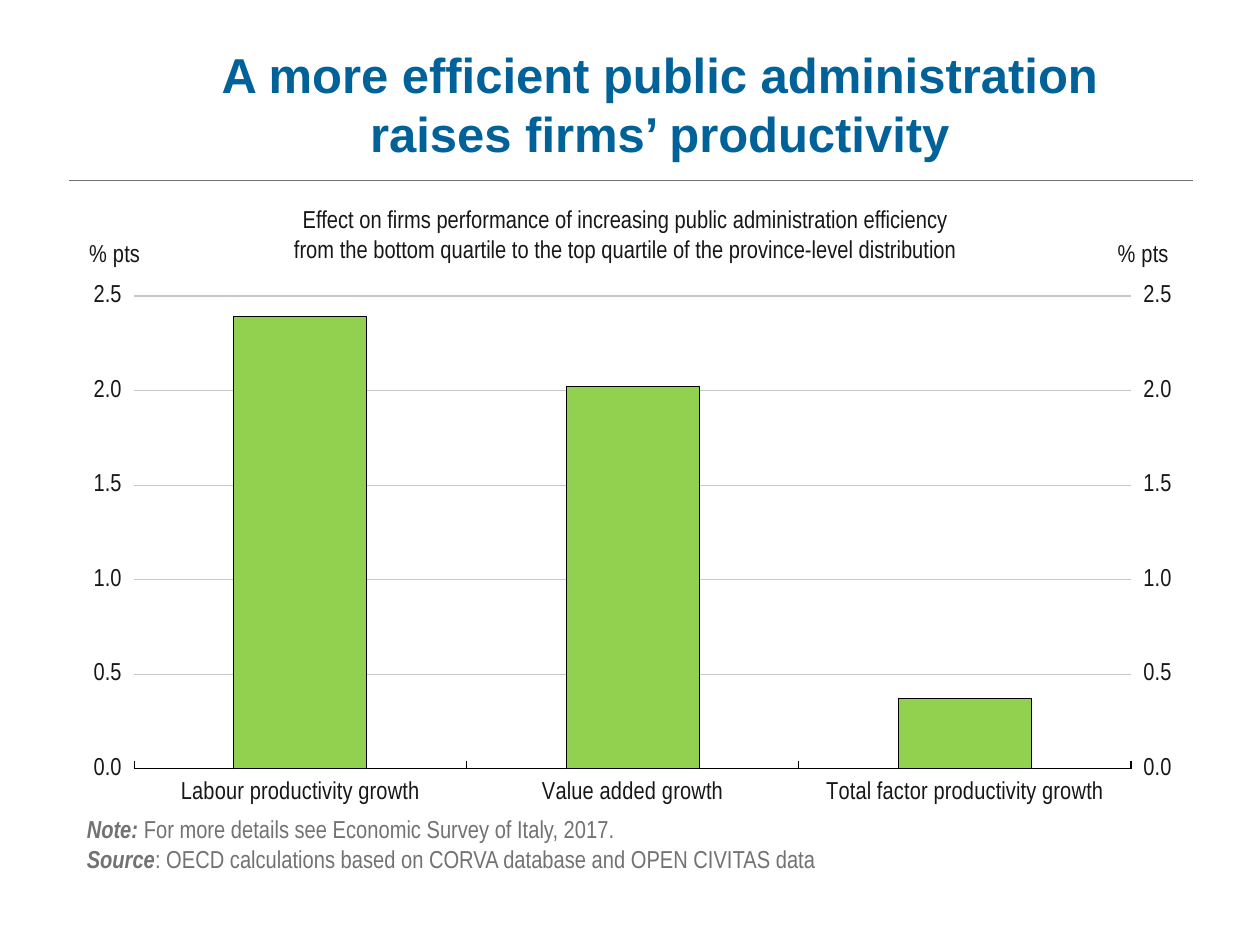
from copy import deepcopy

from lxml.etree import SubElement
from pptx import Presentation
from pptx.chart.data import CategoryChartData
from pptx.dml.color import RGBColor
from pptx.enum.chart import XL_CHART_TYPE, XL_TICK_LABEL_POSITION, XL_TICK_MARK
from pptx.enum.shapes import MSO_CONNECTOR
from pptx.enum.text import MSO_ANCHOR, PP_ALIGN
from pptx.oxml import parse_xml
from pptx.oxml.ns import nsdecls, qn
from pptx.util import Cm, Pt

BLUE = RGBColor(0x00, 0x62, 0x99)
INK = RGBColor(0x17, 0x17, 0x17)
GREY = RGBColor(0x72, 0x72, 0x72)
GRID = RGBColor(0xC8, 0xC8, 0xC8)
GREEN = RGBColor(0x92, 0xD0, 0x50)
RED = RGBColor(0xC0, 0x50, 0x4D)
BLACK = RGBColor(0, 0, 0)
WHITE = RGBColor(0xFF, 0xFF, 0xFF)
NARROW = "Arial Narrow"

TITLE = "A more efficient public administration raises firms’ productivity"
SUBTITLE = (
    "Effect on firms performance of increasing public administration efficiency "
    "from the bottom quartile to the top quartile of the province-level distribution"
)
NOTES = [
    ("Note: ", "For more details see Economic Survey of Italy, 2017."),
    ("Source", ": OECD calculations based on CORVA database and OPEN CIVITAS data"),
]
UNIT = "% pts"
EFFECTS = [
    ("Labour productivity growth", 2.39),
    ("Value added growth", 2.02),
    ("Total factor productivity growth", 0.37),
]
CHART_W, CHART_H = 21.97, 11.71
PLOT = {"x": 1.03, "y": 1.42, "w": 20.16, "h": 9.53}
LEFT_UNIT = {"x": 0.03, "y": 0.23}
RIGHT_UNIT = {"x": 20.83, "y": 0.23}


def set_font(font, name, size, color, bold=False):
    font.name = name
    font.size = Pt(size)
    font.bold = bold
    font.color.rgb = color


def add_text(slide, box, paragraphs, name, size, color, bold=False, align=PP_ALIGN.LEFT):
    tf = slide.shapes.add_textbox(*map(Cm, box)).text_frame
    tf.word_wrap = True
    tf.vertical_anchor = MSO_ANCHOR.MIDDLE
    for i, (lead, body) in enumerate(paragraphs):
        p = tf.paragraphs[0] if i == 0 else tf.add_paragraph()
        p.alignment = align
        set_font(p.font, name, size, color, bold)
        if lead:
            r = p.add_run()
            r.text = lead
            r.font.bold = r.font.italic = True
        p.add_run().text = body


def place(parent, position, after=None, inner=False):
    for old in parent.findall(qn("c:layout")):
        parent.remove(old)
    layout = parse_xml(f"<c:layout {nsdecls('c')}><c:manualLayout/></c:layout>")
    if after is None:
        parent.insert(0, layout)
    else:
        after.addnext(layout)
    manual = layout[0]
    if inner:
        SubElement(manual, qn("c:layoutTarget")).set("val", "inner")
    for key in "xy":
        SubElement(manual, qn(f"c:{key}Mode")).set("val", "edge")
    for key, length in position.items():
        share = length / (CHART_W if key in "xw" else CHART_H)
        SubElement(manual, qn(f"c:{key}")).set("val", str(share))


def place_title(axis, position):
    title = axis.find(qn("c:title"))
    place(title, position, after=title.find(qn("c:tx")))


def add_right_axis(chart):
    area = chart._chartSpace.chart.plotArea
    bars = area.find(qn("c:barChart"))
    cat, val = area.find(qn("c:catAx")), area.find(qn("c:valAx"))
    right_bars, right_cat, right_val = map(deepcopy, (bars, cat, val))
    bars.remove(bars.findall(qn("c:ser"))[1])
    right_bars.remove(right_bars.find(qn("c:ser")))
    bars.addnext(right_bars)
    val.addnext(right_val)
    right_val.addnext(right_cat)

    ids = {cat.find(qn("c:axId")).get("val"): "5001", val.find(qn("c:axId")).get("val"): "5002"}
    for part in (right_bars, right_cat, right_val):
        for tag in ("c:axId", "c:crossAx"):
            for el in part.findall(qn(tag)):
                el.set("val", ids[el.get("val")])
    right_cat.find(qn("c:delete")).set("val", "1")
    right_val.find(qn("c:axPos")).set("val", "r")
    right_val.find(qn("c:crosses")).set("val", "max")
    right_val.remove(right_val.find(qn("c:majorGridlines")))
    place_title(right_val, RIGHT_UNIT)


def add_effects_chart(slide):
    data = CategoryChartData()
    data.categories = [name for name, _ in EFFECTS]
    data.add_series("Series 1", [value for _, value in EFFECTS])
    data.add_series("Series 2", [None] * len(EFFECTS))
    box = map(Cm, (1.68, 4.55, CHART_W, CHART_H))
    chart = slide.shapes.add_chart(XL_CHART_TYPE.COLUMN_CLUSTERED, *box, data).chart
    chart.has_legend = False
    chart.has_title = False
    set_font(chart.font, NARROW, 14, INK)

    plot = chart.plots[0]
    plot.gap_width = 150
    plot.vary_by_categories = False
    for series, color in zip(plot.series, (GREEN, RED)):
        series.format.fill.solid()
        series.format.fill.fore_color.rgb = color
        series.format.line.color.rgb = BLACK
        series.format.line.width = Pt(0.5)

    cat = chart.category_axis
    cat.major_tick_mark = XL_TICK_MARK.INSIDE
    cat.tick_label_position = XL_TICK_LABEL_POSITION.LOW
    cat.format.line.color.rgb = BLACK
    cat.format.line.width = Pt(0.75)

    val = chart.value_axis
    val.minimum_scale, val.maximum_scale, val.major_unit = 0, 2.5, 0.5
    val.major_tick_mark = XL_TICK_MARK.CROSS
    val.tick_labels.number_format = "#,##0.0"
    val.tick_labels.number_format_is_linked = False
    val.format.line.fill.background()
    val.major_gridlines.format.line.color.rgb = GRID
    val.major_gridlines.format.line.width = Pt(0.75)
    tf = val.axis_title.text_frame
    tf.text = UNIT
    set_font(tf.paragraphs[0].font, NARROW, 14, INK)
    body = tf._txBody.find(qn("a:bodyPr"))
    body.set("rot", "0")
    body.set("vert", "horz")

    area = chart._chartSpace.chart.plotArea
    place(area, PLOT, inner=True)
    place_title(area.find(qn("c:valAx")), LEFT_UNIT)
    add_right_axis(chart)
    fill = parse_xml(
        f'<c:spPr {nsdecls("c", "a")}><a:solidFill><a:srgbClr val="{WHITE}"/></a:solidFill></c:spPr>'
    )
    area.append(fill)


def main():
    prs = Presentation()
    prs.slide_width, prs.slide_height = Cm(25.4), Cm(19.05)
    slide = prs.slides.add_slide(prs.slide_layouts[6])

    rule = slide.shapes.add_connector(
        MSO_CONNECTOR.STRAIGHT, Cm(1.4), Cm(3.63), Cm(24.05), Cm(3.63)
    )
    rule.line.color.rgb = GREY
    rule.line.width = Pt(0.5)
    SubElement(rule._element.spPr, qn("a:effectLst"))

    add_effects_chart(slide)
    add_text(slide, (3, 0.66, 20.6, 2.84), [("", TITLE)], "Arial", 28, BLUE, True, PP_ALIGN.CENTER)
    add_text(slide, (5.41, 3.99, 14.4, 1.45), [("", SUBTITLE)], NARROW, 14, INK, align=PP_ALIGN.CENTER)
    add_text(slide, (1.5, 16.28, 22.2, 1.45), NOTES, NARROW, 14, GREY)
    prs.save("out.pptx")


if __name__ == "__main__":
    main()
